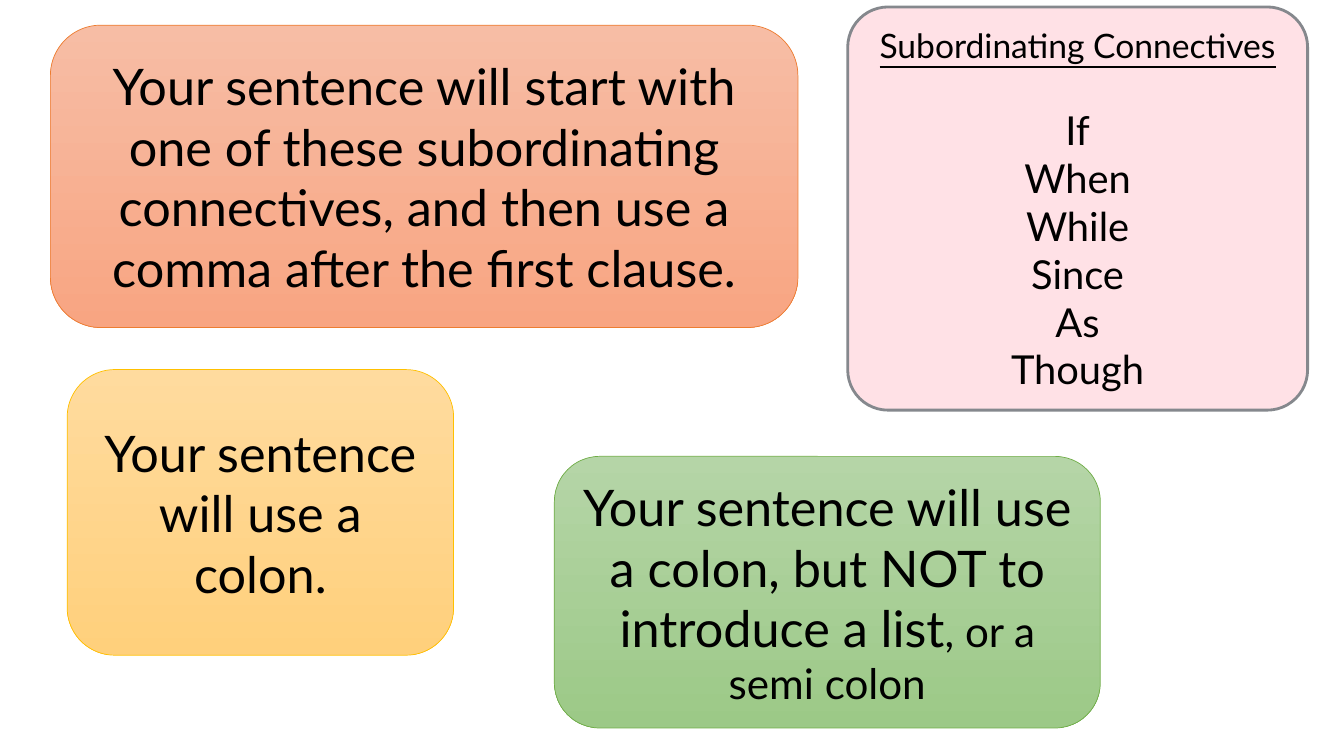
from dataclasses import dataclass

from pptx import Presentation
from pptx.dml.color import RGBColor
from pptx.enum.shapes import MSO_SHAPE
from pptx.enum.text import MSO_ANCHOR, PP_ALIGN
from pptx.shapes.autoshape import Shape
from pptx.shapes.shapetree import GroupShapes, SlideShapes
from pptx.text.text import TextFrame, _Paragraph
from pptx.util import Pt

ROUNDED = MSO_SHAPE.ROUNDED_RECTANGLE
RECTANGLE = MSO_SHAPE.RECTANGLE
MIDDLE = MSO_ANCHOR.MIDDLE
CENTER = PP_ALIGN.CENTER

FONT = "Lato"
BLACK = "000000"
PINK = "FFE1E6"
GREY = "85888D"
HEADING_SIZE = 24
CONNECTIVE_SIZE = 28.5
CONNECTIVES = ("If", "When", "While", "Since", "As", "Though")


@dataclass(frozen=True)
class Box:
    left: float
    top: float
    width: float
    height: float


@dataclass(frozen=True)
class TextRun:
    text: str
    size: float = 36


@dataclass(frozen=True)
class RuleCard:
    box: Box
    gradient: tuple[str, str]
    outline: str
    runs: tuple[TextRun, ...]


RULE_CARDS = (
    RuleCard(
        Box(36, 18, 534, 216), ("F7BDA5", "F8A582"), "ED7D31",
        (TextRun("Your sentence will start with one of these subordinating "
                 "connectives, and then use a comma after the first clause."),),
    ),
    RuleCard(
        Box(48, 264, 276, 204), ("FFDB9E", "FFD07C"), "FFC000",
        (TextRun("Your sentence will use a colon."),),
    ),
    RuleCard(
        Box(396, 326, 390, 194), ("B5D5A7", "9CC987"), "70AD47",
        (TextRun("Your sentence will use a colon, but NOT to introduce a list"),
         TextRun(", or a semi colon", 30.1)),
    ),
)
CONNECTIVES_CARD = Box(605.5, 5, 328.5, 288)
CONNECTIVES_LIST = Box(615, 26.5, 309.5, 245.5)


def color(value: str) -> RGBColor:
    return RGBColor.from_string(value)


def add_box(shapes: SlideShapes | GroupShapes, kind: MSO_SHAPE, box: Box) -> Shape:
    shape = shapes.add_shape(
        kind, Pt(box.left), Pt(box.top), Pt(box.width), Pt(box.height))
    shape.shadow.inherit = False
    return shape


def set_outline(shape: Shape, value: str, width: float) -> None:
    shape.line.color.rgb = color(value)
    shape.line.width = Pt(width)


def fill_solid(shape: Shape, value: str) -> None:
    shape.fill.solid()
    shape.fill.fore_color.rgb = color(value)


def fill_downward(shape: Shape, gradient: tuple[str, str]) -> None:
    """Fill with a gradient that runs from top to bottom."""
    shape.fill.gradient()
    shape.fill.gradient_angle = 270
    for stop, value in zip(shape.fill.gradient_stops, gradient):
        stop.color.rgb = color(value)


def prepare_text(shape: Shape) -> TextFrame:
    """Wrap and centre the text of a shape."""
    frame = shape.text_frame
    frame.word_wrap = True
    frame.vertical_anchor = MIDDLE
    frame.paragraphs[0].alignment = CENTER
    return frame


def add_text(paragraph: _Paragraph, text: str, *, size: float,
             underline: bool = False) -> None:
    run = paragraph.add_run()
    run.text = text
    run.font.name = FONT
    run.font.size = Pt(size)
    run.font.underline = underline
    run.font.color.rgb = color(BLACK)


def add_rule_card(shapes: SlideShapes, card: RuleCard) -> None:
    shape = add_box(shapes, ROUNDED, card.box)
    fill_downward(shape, card.gradient)
    set_outline(shape, card.outline, 0.5)
    paragraph = prepare_text(shape).paragraphs[0]
    for run in card.runs:
        add_text(paragraph, run.text, size=run.size)


def add_connectives(shapes: SlideShapes) -> None:
    group = shapes.add_group_shape()
    card = add_box(group.shapes, ROUNDED, CONNECTIVES_CARD)
    card.adjustments[0] = 0.1
    fill_solid(card, PINK)
    set_outline(card, GREY, 2)

    panel = add_box(group.shapes, RECTANGLE, CONNECTIVES_LIST)
    fill_solid(panel, PINK)
    panel.line.fill.background()
    frame = prepare_text(panel)
    frame.margin_left = frame.margin_right = Pt(0)
    frame.margin_top = frame.margin_bottom = Pt(0)
    heading = frame.paragraphs[0]
    heading.space_after = Pt(HEADING_SIZE * 1.2)
    add_text(heading, "Subordinating Connectives", size=HEADING_SIZE, underline=True)
    for word in CONNECTIVES:
        paragraph = frame.add_paragraph()
        paragraph.alignment = CENTER
        add_text(paragraph, word, size=CONNECTIVE_SIZE)


def main() -> None:
    presentation = Presentation()
    presentation.slide_width = Pt(960)
    presentation.slide_height = Pt(540)
    blank_layout = presentation.slide_layouts[6]
    slide = presentation.slides.add_slide(blank_layout)
    add_connectives(slide.shapes)
    for card in RULE_CARDS:
        add_rule_card(slide.shapes, card)
    presentation.save("out.pptx")


if __name__ == "__main__":
    main()
